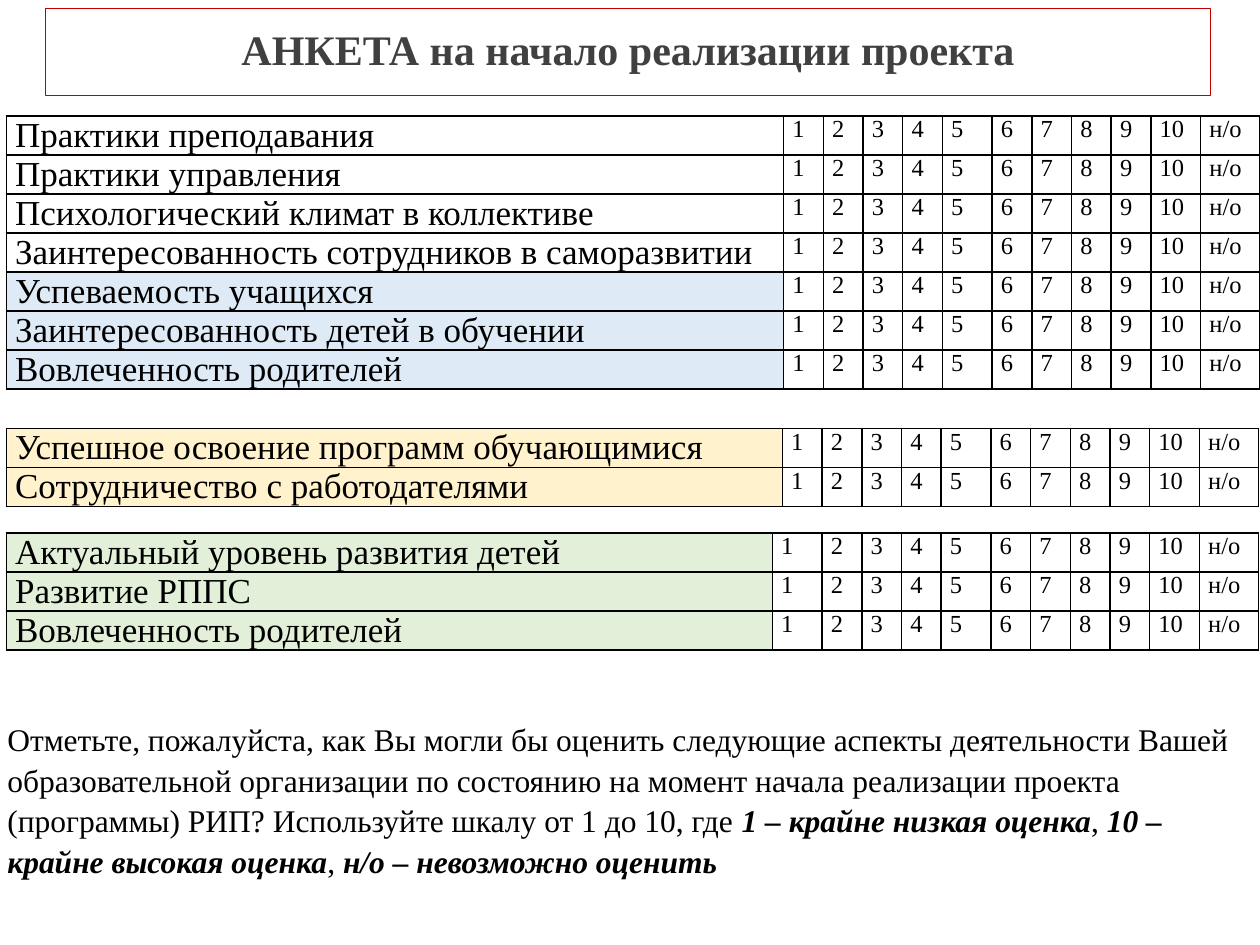
from dataclasses import dataclass

from lxml.etree import SubElement
from pptx import Presentation
from pptx.dml.color import RGBColor
from pptx.enum.shapes import MSO_SHAPE
from pptx.enum.text import MSO_ANCHOR, MSO_AUTO_SIZE, PP_ALIGN
from pptx.oxml.ns import qn
from pptx.slide import Slide
from pptx.table import _Cell
from pptx.text.text import Font
from pptx.util import Inches, Pt

FONT_NAME = "Times New Roman"
BLACK = "000000"
WHITE = "FFFFFF"
BLUE = "DEEBF7"
YELLOW = "FFF2CC"
GREEN = "E2F0D9"
MARKS = [str(mark) for mark in range(1, 11)] + ["н/о"]
NARROW, WIDE, LAST = 0.315, 0.395, 0.47
ROW_HEIGHT = 0.31


@dataclass
class Aspect:
    label: str
    fill: str = ""


@dataclass
class Scale:
    top: float
    label_width: float
    wide_marks: tuple[str, ...]
    aspects: list[Aspect]


SCALES = [
    Scale(0.92, 6.17, ("5", "10"), [
        Aspect("Практики преподавания"),
        Aspect("Практики управления"),
        Aspect("Психологический климат в коллективе"),
        Aspect("Заинтересованность сотрудников в саморазвитии"),
        Aspect("Успеваемость учащихся", BLUE),
        Aspect("Заинтересованность детей в обучении", BLUE),
        Aspect("Вовлеченность родителей", BLUE),
    ]),
    Scale(3.4, 6.16, ("5", "10"), [
        Aspect("Успешное освоение программ обучающимися", YELLOW),
        Aspect("Сотрудничество с работодателями", YELLOW),
    ]),
    Scale(4.23, 6.08, ("1", "5", "10"), [
        Aspect("Актуальный уровень развития детей", GREEN),
        Aspect("Развитие РППС", GREEN),
        Aspect("Вовлеченность родителей", GREEN),
    ]),
]

INSTRUCTION = [
    ("Отметьте, пожалуйста, как Вы могли бы оценить следующие аспекты деятельности "
     "Вашей образовательной организации по состоянию на момент начала реализации "
     "проекта (программы) РИП? Используйте шкалу от 1 до 10, где ", False),
    ("1 – крайне низкая оценка", True),
    (", ", False),
    ("10 – крайне высокая оценка", True),
    (", ", False),
    ("н/о – невозможно оценить", True),
]


def color(value: str) -> RGBColor:
    """Turn a hex string into a colour."""
    return RGBColor.from_string(value)


def style_font(font: Font, size: float, value: str = BLACK) -> None:
    """Set the typeface, size and colour of a font."""
    font.name = FONT_NAME
    font.size = Pt(size)
    font.color.rgb = color(value)


def add_borders(cell: _Cell) -> None:
    """Give a cell thin black borders, placed before its fill."""
    properties = cell._tc.get_or_add_tcPr()
    for index, side in enumerate(("a:lnL", "a:lnR", "a:lnT", "a:lnB")):
        line = SubElement(properties, qn(side), w=str(Pt(1)))
        fill = SubElement(line, qn("a:solidFill"))
        SubElement(fill, qn("a:srgbClr"), val=BLACK)
        properties.insert(index, line)


def fill_cell(cell: _Cell, text: str, size: float, fill: str = "") -> None:
    """Write one table cell."""
    cell.margin_left = cell.margin_right = Inches(0.07)
    cell.margin_top = cell.margin_bottom = 0
    paragraph = cell.text_frame.paragraphs[0]
    paragraph.text = text
    style_font(paragraph.font, size)
    if fill:
        cell.fill.solid()
        cell.fill.fore_color.rgb = color(fill)
    else:
        cell.fill.background()
    add_borders(cell)


def mark_width(mark: str, wide_marks: tuple[str, ...]) -> float:
    """Return the column width of a mark."""
    if mark == MARKS[-1]:
        return LAST
    return WIDE if mark in wide_marks else NARROW


def add_scale(slide: Slide, scale: Scale) -> None:
    """Draw one rating table."""
    widths = [scale.label_width] + [mark_width(mark, scale.wide_marks) for mark in MARKS]
    table = slide.shapes.add_table(
        len(scale.aspects), len(widths), Inches(0.05), Inches(scale.top),
        Inches(sum(widths)), Inches(ROW_HEIGHT * len(scale.aspects)),
    ).table
    table.first_row = table.horz_banding = False
    for column, width in zip(table.columns, widths):
        column.width = Inches(width)
    for row, aspect in enumerate(scale.aspects):
        fill_cell(table.cell(row, 0), aspect.label, 20, aspect.fill)
        for column, mark in enumerate(MARKS, start=1):
            fill_cell(table.cell(row, column), mark, 14)


def add_title(slide: Slide) -> None:
    """Draw the framed heading."""
    title = slide.shapes.add_shape(
        MSO_SHAPE.RECTANGLE, Inches(0.36), Inches(0.07), Inches(9.25), Inches(0.69))
    title.shadow.inherit = False
    title.fill.solid()
    title.fill.fore_color.rgb = color(WHITE)
    title.line.color.rgb = color("C00000")
    title.line.width = Pt(0.75)
    title.text_frame.word_wrap = True
    title.text_frame.vertical_anchor = MSO_ANCHOR.MIDDLE
    paragraph = title.text_frame.paragraphs[0]
    paragraph.text = "АНКЕТА на начало реализации проекта"
    paragraph.alignment = PP_ALIGN.CENTER
    paragraph.line_spacing = 0.9
    style_font(paragraph.font, 24, "404040")
    paragraph.font.bold = True


def add_instruction(slide: Slide) -> None:
    """Write the instruction below the tables."""
    instruction = slide.shapes.add_textbox(
        Inches(-0.04), Inches(5.64), Inches(9.98), Inches(1.31)).text_frame
    instruction.word_wrap = True
    instruction.auto_size = MSO_AUTO_SIZE.SHAPE_TO_FIT_TEXT
    paragraph = instruction.paragraphs[0]
    paragraph.line_spacing = 1.08
    style_font(paragraph.font, 18)
    for text, emphasized in INSTRUCTION:
        run = paragraph.add_run()
        run.text = text
        run.font.bold = run.font.italic = emphasized


def main() -> None:
    """Build the questionnaire slide."""
    presentation = Presentation()
    presentation.slide_width = Inches(10)
    presentation.slide_height = Inches(7.5)
    slide = presentation.slides.add_slide(presentation.slide_layouts[6])
    add_title(slide)
    for scale in SCALES:
        add_scale(slide, scale)
    add_instruction(slide)
    presentation.save("out.pptx")


if __name__ == "__main__":
    main()
